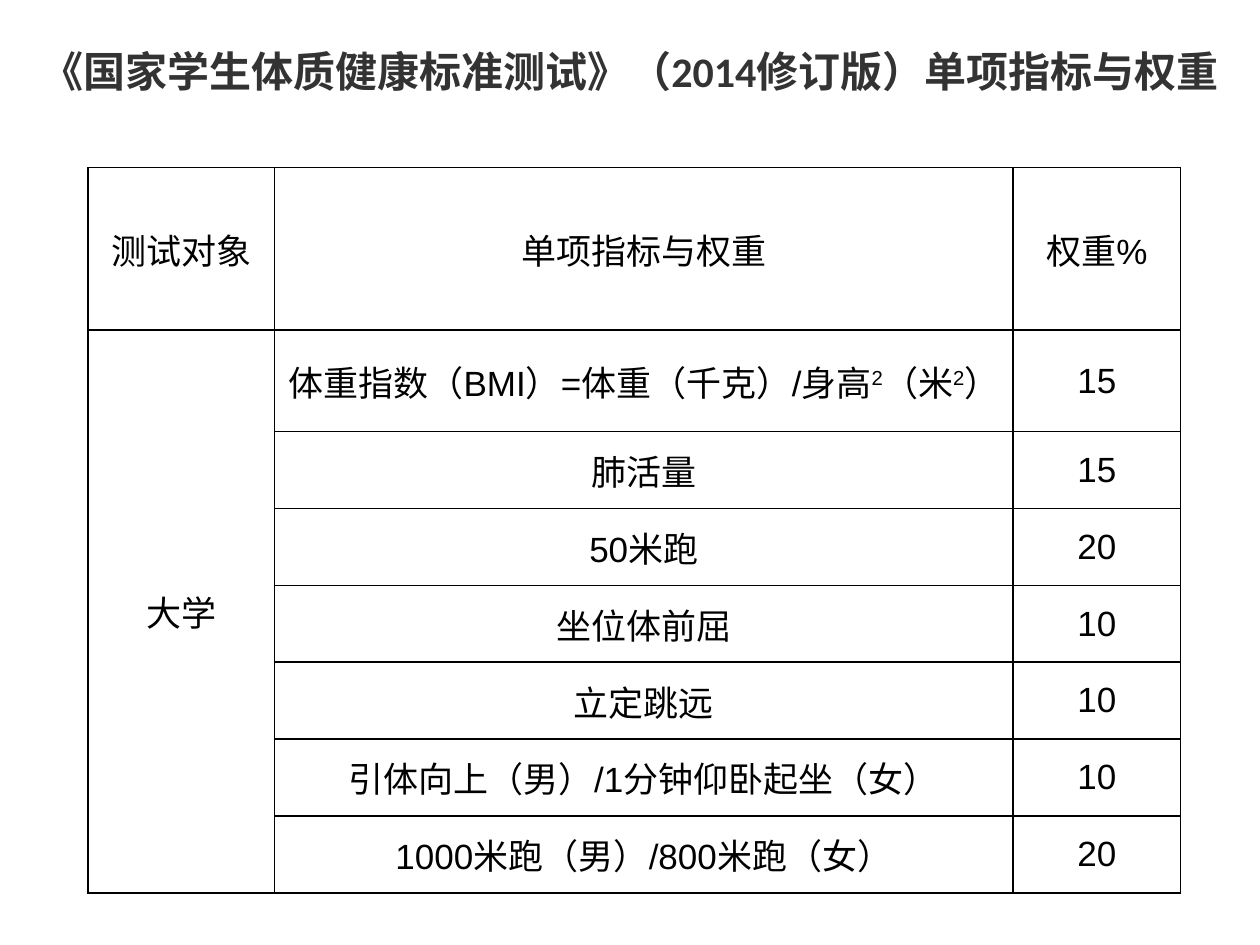
from lxml import etree
from pptx import Presentation
from pptx.dml.color import RGBColor
from pptx.enum.text import MSO_ANCHOR, MSO_AUTO_SIZE, PP_ALIGN
from pptx.oxml.ns import qn
from pptx.util import Inches, Pt

CENTER = PP_ALIGN.CENTER
MIDDLE = MSO_ANCHOR.MIDDLE
TOP = MSO_ANCHOR.TOP
NO_AUTOFIT = MSO_AUTO_SIZE.NONE

HEADERS = ["测试对象", "单项指标与权重", "权重%"]
GROUP = "大学"
INDICATORS = [
    ("体重指数（BMI）=体重（千克）/身高^2^（米^2^）", 15),
    ("肺活量", 15),
    ("50米跑", 20),
    ("坐位体前屈", 10),
    ("立定跳远", 10),
    ("引体向上（男）/1分钟仰卧起坐（女）", 10),
    ("1000米跑（男）/800米跑（女）", 20),
]
COLUMN_WIDTHS = [1.48, 5.86, 1.33]
HEADER_HEIGHT, ROW_HEIGHT = 1.29, 0.61


def color(value):
    return RGBColor.from_string(value)


class SlideBuilder:
    """Holds the style and the current slide, and adds its elements."""

    title_font, title_size, title_color = "Calibri", Pt(24), "333333"
    body_font, body_size, body_color = "Arial", Pt(20), "000000"
    border_color, border_width = "000000", Pt(1)

    def __init__(self, slide):
        self.slide = slide

    def title(self, text, left, top, width, height):
        heading = self.slide.shapes.title
        heading.left, heading.top = Inches(left), Inches(top)
        heading.width, heading.height = Inches(width), Inches(height)
        frame = heading.text_frame
        frame.text = text
        frame.word_wrap = True
        frame.auto_size = NO_AUTOFIT
        frame.vertical_anchor = TOP
        paragraph = frame.paragraphs[0]
        paragraph.alignment = CENTER
        font = paragraph.runs[0].font
        font.name, font.size, font.bold = self.title_font, self.title_size, True
        font.color.rgb = color(self.title_color)

    def table(self, left, top, widths, heights):
        frame = self.slide.shapes.add_table(
            len(heights), len(widths), Inches(left), Inches(top),
            Inches(sum(widths)), Inches(sum(heights)))
        grid = frame.table
        for column, width in zip(grid.columns, widths):
            column.width = Inches(width)
        for row, height in zip(grid.rows, heights):
            row.height = Inches(height)
        for cell in grid.iter_cells():
            self.border(cell)
            cell.fill.background()
        return grid

    def border(self, cell):
        properties = cell._tc.get_or_add_tcPr()
        for side in ("a:lnL", "a:lnR", "a:lnT", "a:lnB"):
            line = etree.SubElement(properties, qn(side), w=str(self.border_width))
            fill = etree.SubElement(line, qn("a:solidFill"))
            etree.SubElement(fill, qn("a:srgbClr"), val=self.border_color)

    def cell(self, cell, text):
        cell.margin_left = cell.margin_right = 0
        cell.margin_top = cell.margin_bottom = 0
        cell.vertical_anchor = MIDDLE
        paragraph = cell.text_frame.paragraphs[0]
        paragraph.alignment = CENTER
        for index, part in enumerate(text.split("^")):
            run = paragraph.add_run()
            run.text = part
            font = run.font
            font.name, font.size = self.body_font, self.body_size
            font.color.rgb = color(self.body_color)
            if index % 2:
                run._r.get_or_add_rPr().set("baseline", "30000")


def main():
    presentation = Presentation()
    presentation.slide_width, presentation.slide_height = Inches(10), Inches(7.5)
    slide = presentation.slides.add_slide(presentation.slide_layouts[5])
    builder = SlideBuilder(slide)
    builder.title("《国家学生体质健康标准测试》（2014修订版）单项指标与权重",
                  0, 0.31, 10, 0.81)

    heights = [HEADER_HEIGHT] + [ROW_HEIGHT] * len(INDICATORS)
    weights = builder.table(0.7, 1.33, COLUMN_WIDTHS, heights)
    for column, header in enumerate(HEADERS):
        builder.cell(weights.cell(0, column), header)
    weights.cell(1, 0).merge(weights.cell(len(INDICATORS), 0))
    builder.cell(weights.cell(1, 0), GROUP)
    for row, (indicator, weight) in enumerate(INDICATORS, start=1):
        builder.cell(weights.cell(row, 1), indicator)
        builder.cell(weights.cell(row, 2), str(weight))

    presentation.save("out.pptx")


if __name__ == "__main__":
    main()
